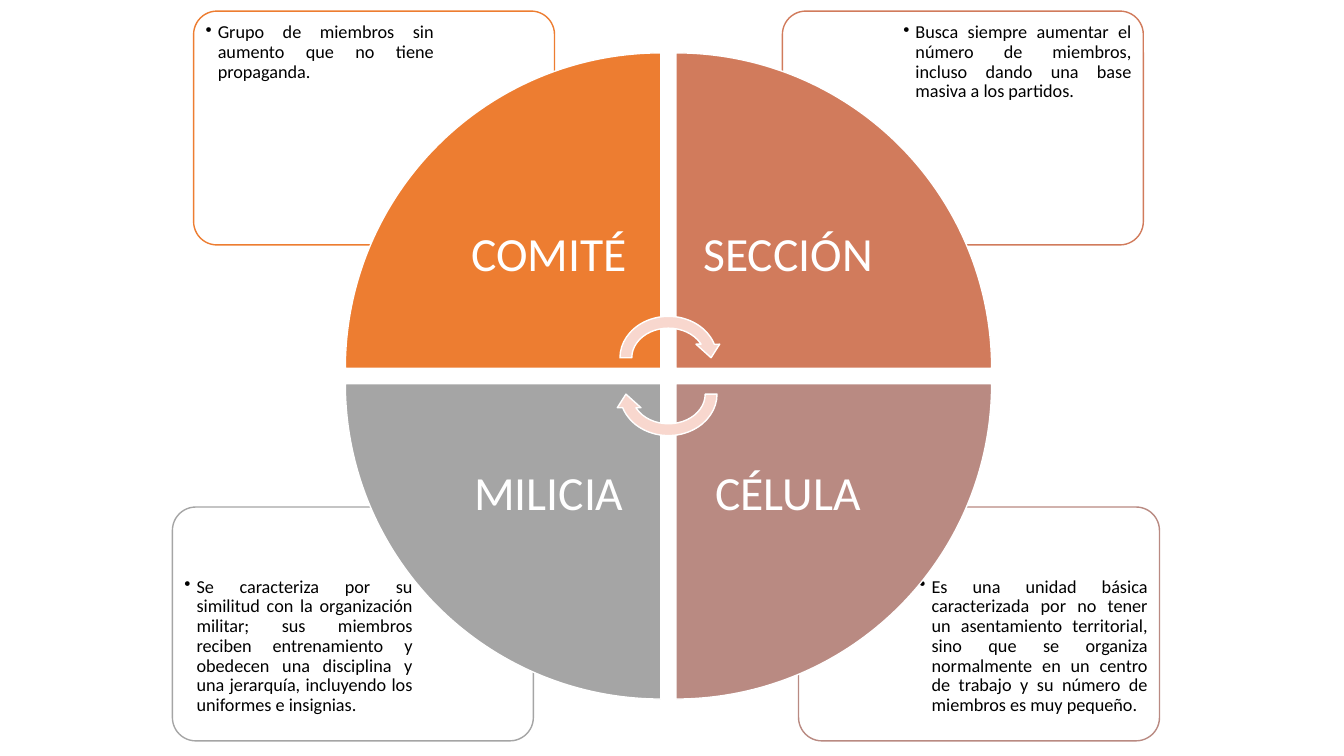
from dataclasses import dataclass

import lxml.etree
import pptx
import pptx.dml.color
import pptx.enum.shapes
import pptx.enum.text
import pptx.oxml.ns
import pptx.util

SHAPES = pptx.enum.shapes.MSO_SHAPE
ALIGN = pptx.enum.text.PP_ALIGN
ANCHOR = pptx.enum.text.MSO_ANCHOR


@dataclass(frozen=True)
class Theme:
    font: str = "Calibri"
    title_size: int = 34
    note_size: int = 13
    line_width: int = 1
    white: str = "FFFFFF"
    black: str = "000000"
    arrow: str = "F8D7CE"


THEME = Theme()
SLIDE_W, SLIDE_H = 13.33, 7.5

# Cycle geometry, measured from its centre
CENTRE_X, CENTRE_Y = 6.63, 3.73
WEDGE, GAP = 3.13, 0.15
TITLE_SHARE = 0.71
ARROW_W, ARROW_H, ARROW_SHIFT = 1.08, 0.94, 0.18

# Note cards
CARD_W, CARD_H, CARD_MARGIN = 3.58, 2.32, 0.11
NOTE_W, NOTE_H, NOTE_EDGE = 2.4, 1.64, 0.05
BULLET_INDENT = 0.12

# Column, row, rotation, colour, card left, title, note; listed clockwise
PARTY_TYPES = [
    (0, 0, 0, "ED7D31", 1.92, "COMITÉ",
     "Grupo de miembros sin aumento que no tiene propaganda."),
    (1, 0, 90, "D17B5C", 7.76, "SECCIÓN",
     "Busca siempre aumentar el número de miembros, "
     "incluso dando una base masiva a los partidos."),
    (1, 1, 180, "B98A82", 7.92, "CÉLULA",
     "Es una unidad básica caracterizada por no tener un asentamiento "
     "territorial, sino que se organiza normalmente en un centro de trabajo "
     "y su número de miembros es muy pequeño."),
    (0, 1, 270, "A5A5A5", 1.71, "MILICIA",
     "Se caracteriza por su similitud con la organización militar; sus "
     "miembros reciben entrenamiento y obedecen una disciplina y una "
     "jerarquía, incluyendo los uniformes e insignias."),
]


def rgb(value):
    return pptx.dml.color.RGBColor.from_string(value)


def inches(*lengths):
    return [pptx.util.Inches(length) for length in lengths]


def add_outline(slide, preset, box, fill, line, rotation=0):
    shape = slide.shapes.add_shape(preset, *inches(*box))
    shape.shadow.inherit = False
    shape.fill.solid()
    shape.fill.fore_color.rgb = rgb(fill)
    shape.line.color.rgb = rgb(line)
    shape.line.width = pptx.util.Pt(THEME.line_width)
    shape.rotation = rotation
    return shape


def add_label(slide, box, text, inset, anchor, align, size, color, bullet=False):
    frame = slide.shapes.add_textbox(*inches(*box)).text_frame
    frame.word_wrap = True
    frame.vertical_anchor = anchor
    frame.margin_left = frame.margin_right = pptx.util.Inches(inset)
    frame.margin_top = frame.margin_bottom = pptx.util.Inches(inset)
    paragraph = frame.paragraphs[0]
    if bullet:
        add_bullet(paragraph)
    paragraph.alignment = align
    paragraph.line_spacing = 0.9
    run = paragraph.add_run()
    run.text = text
    run.font.name = THEME.font
    run.font.size = pptx.util.Pt(size)
    run.font.color.rgb = rgb(color)


def add_bullet(paragraph):
    paragraph.level = 1
    properties = paragraph._p.get_or_add_pPr()
    indent = pptx.util.Inches(BULLET_INDENT)
    properties.set("marL", str(indent))
    properties.set("indent", str(-indent))
    mark = lxml.etree.SubElement(properties, pptx.oxml.ns.qn("a:buChar"))
    mark.set("char", "•")


def add_note_card(slide, box, column, row, color, note):
    left, top, width, height = box
    card = add_outline(slide, SHAPES.ROUNDED_RECTANGLE, box, THEME.white, color)
    card.adjustments[0] = 0.1
    # The note sits in the outer corner of its card
    note_left = left + width - NOTE_W - NOTE_EDGE if column else left + NOTE_EDGE
    note_top = top + height - NOTE_H - NOTE_EDGE if row else top + NOTE_EDGE
    add_label(slide, (note_left, note_top, NOTE_W, NOTE_H), note, 0.07,
              ANCHOR.TOP, ALIGN.JUSTIFY, THEME.note_size, THEME.black, bullet=True)


def add_wedge(slide, box, column, row, rotation, color, title):
    left, top, size, _ = box
    add_outline(slide, SHAPES.PIE_WEDGE, box, color, THEME.white, rotation)
    # The title fills the square next to the centre of the cycle
    side = size * TITLE_SHARE
    title_left = left if column else left + size - side
    title_top = top if row else top + size - side
    add_label(slide, (title_left, title_top, side, side), title, 0.26,
              ANCHOR.MIDDLE, ALIGN.CENTER, THEME.title_size, THEME.white)


def add_cycle_arrows(slide, centre_x, centre_y):
    for direction, rotation in ((-1, 0), (1, 180)):
        top = centre_y + direction * ARROW_SHIFT - ARROW_H / 2
        add_outline(slide, SHAPES.CIRCULAR_ARROW,
                    (centre_x - ARROW_W / 2, top, ARROW_W, ARROW_H),
                    THEME.arrow, THEME.white, rotation)


def add_cycle_matrix(slide):
    # Cards lie behind the wedges
    for column, row, _, color, card_left, _, note in reversed(PARTY_TYPES):
        card_top = SLIDE_H - CARD_H - 0.15 if row else CARD_MARGIN
        add_note_card(slide, (card_left, card_top, CARD_W, CARD_H),
                      column, row, color, note)

    # Four wedges on a two by two grid
    origin_x = CENTRE_X - GAP / 2 - WEDGE
    origin_y = CENTRE_Y - GAP / 2 - WEDGE
    for column, row, rotation, color, _, title, _ in PARTY_TYPES:
        box = (origin_x + column * (WEDGE + GAP),
               origin_y + row * (WEDGE + GAP), WEDGE, WEDGE)
        add_wedge(slide, box, column, row, rotation, color, title)

    add_cycle_arrows(slide, CENTRE_X, CENTRE_Y)


def main():
    deck = pptx.Presentation()
    deck.slide_width, deck.slide_height = inches(SLIDE_W, SLIDE_H)
    slide = deck.slides.add_slide(deck.slide_layouts[6])
    add_cycle_matrix(slide)
    deck.save("out.pptx")


if __name__ == "__main__":
    main()
